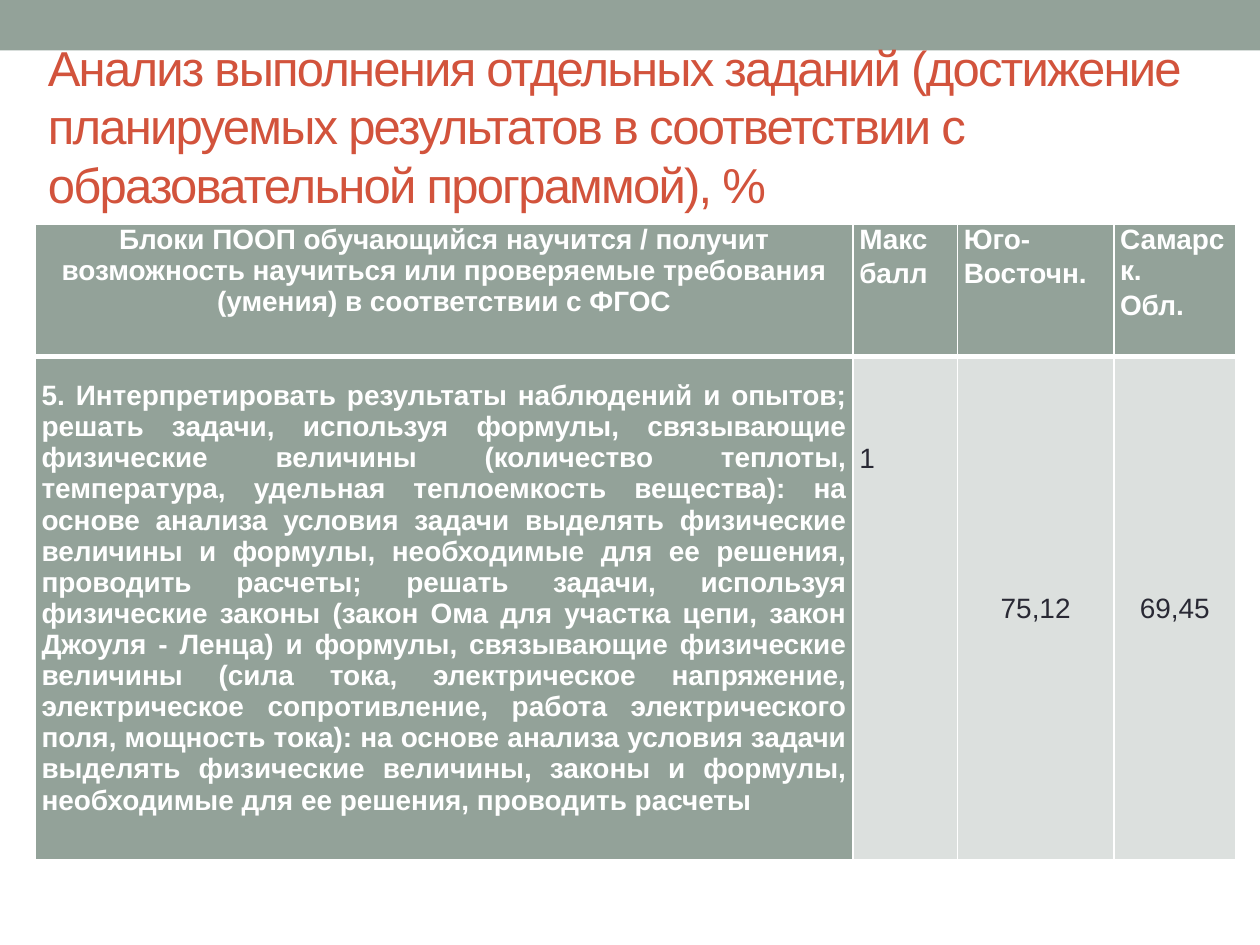
import pptx
import pptx.util
import pptx.dml.color
import pptx.enum.shapes
import pptx.enum.text
import lxml.etree
from pptx.oxml.ns import qn

Inches, Pt = pptx.util.Inches, pptx.util.Pt
ALIGN = pptx.enum.text.PP_ALIGN
ANCHOR = pptx.enum.text.MSO_ANCHOR
SAGE, PALE, WHITE, RED, INK = "93A299", "DCE0DE", "FFFFFF", "D2533C", "292934"


def paint(color_format, color):
    """Give a fill or font colour a hex value."""
    color_format.rgb = pptx.dml.color.RGBColor.from_string(color)


def add_border(cell, side, points):
    """Draw a white line on one side of a cell: L, R, T or B."""
    properties = cell._tc.get_or_add_tcPr()
    line = lxml.etree.Element(qn(f"a:ln{side}"), w=str(Pt(points)))
    solid = lxml.etree.SubElement(line, qn("a:solidFill"))
    lxml.etree.SubElement(solid, qn("a:srgbClr"), val=WHITE)
    properties.insert("LRTB".index(side), line)


deck = pptx.Presentation()
deck.slide_width, deck.slide_height = Inches(10), Inches(7.5)
slide = deck.slides.add_slide(deck.slide_layouts[5])
left, width = Inches(0.28), Inches(9.53)

# Title over the top band
title = slide.shapes.title
title.left, title.top, title.width, title.height = left, Inches(0.68), width, Inches(1.08)
heading = title.text_frame
heading.text = ("Анализ выполнения отдельных заданий (достижение планируемых результатов "
                "в соответствии с образовательной программой), %")
heading.word_wrap = True
heading.auto_size = pptx.enum.text.MSO_AUTO_SIZE.NONE
heading.vertical_anchor = ANCHOR.MIDDLE
heading.margin_bottom = Inches(0.5)
heading_line = heading.paragraphs[0]
heading_line.alignment = ALIGN.LEFT
heading_line.font.size, heading_line.font.name = Pt(28), "Arial"
paint(heading_line.font.color, RED)
heading_line.runs[0].font._element.set("spc", "-100")

band = slide.shapes.add_shape(pptx.enum.shapes.MSO_SHAPE.RECTANGLE,
                              0, 0, deck.slide_width, Inches(0.4))
band.shadow.inherit = False
band.fill.solid()
paint(band.fill.fore_color, SAGE)
band.line.fill.background()
title.element.addprevious(band.element)

# Results table
requirement = (
    "5. Интерпретировать результаты наблюдений и опытов; решать задачи, используя формулы, "
    "связывающие физические величины (количество теплоты, температура, удельная теплоемкость "
    "вещества): на основе анализа условия задачи выделять физические величины и формулы, "
    "необходимые для ее решения, проводить расчеты; решать задачи, используя физические законы "
    "(закон Ома для участка цепи, закон Джоуля - Ленца) и формулы, связывающие физические "
    "величины (сила тока, электрическое напряжение, электрическое сопротивление, работа "
    "электрического поля, мощность тока): на основе анализа условия задачи выделять физические "
    "величины, законы и формулы, необходимые для ее решения, проводить расчеты")
# Each cell: text, alignment, anchor, top margin in inches, line spacing
results = [
    [("Блоки ПООП обучающийся научится / получит возможность научиться или проверяемые "
      "требования (умения) в соответствии с ФГОС", ALIGN.CENTER, ANCHOR.TOP, 0, None),
     ("Макс\nбалл", ALIGN.LEFT, ANCHOR.TOP, 0, None),
     ("Юго-\nВосточн.", ALIGN.LEFT, ANCHOR.TOP, 0, None),
     ("Самарск.\nОбл.", ALIGN.LEFT, ANCHOR.TOP, 0, None)],
    [(requirement, ALIGN.JUSTIFY, ANCHOR.TOP, 0.19, None),
     ("1", ALIGN.LEFT, ANCHOR.TOP, 0.77, Pt(12)),
     ("75,12", ALIGN.CENTER, ANCHOR.MIDDLE, 0, 1.05),
     ("69,45", ALIGN.CENTER, ANCHOR.MIDDLE, 0, 1.05)],
]
column_widths, row_heights = [6.49, 0.83, 1.24, 0.97], [1.05, 3.99]
table = slide.shapes.add_table(len(row_heights), len(column_widths), left, Inches(1.78),
                               width, Inches(sum(row_heights))).table
for column, inches in zip(table.columns, column_widths):
    column.width = Inches(inches)
for row, inches in zip(table.rows, row_heights):
    row.height = Inches(inches)

for r, row in enumerate(results):
    for c, (text, alignment, anchor, top_margin, spacing) in enumerate(row):
        cell = table.cell(r, c)
        is_label = r == 0 or c == 0
        cell.text = text
        cell.vertical_anchor = anchor
        cell.margin_left = cell.margin_right = Inches(0.05)
        cell.margin_top, cell.margin_bottom = Inches(top_margin), 0
        cell.fill.solid()
        paint(cell.fill.fore_color, SAGE if is_label else PALE)
        for side in "LRTB":
            divides_header = (r, side) in [(0, "B"), (1, "T")]
            add_border(cell, side, 3 if divides_header else 1)
        for paragraph in cell.text_frame.paragraphs:
            paragraph.alignment = alignment
            paragraph.line_spacing = spacing
            paragraph.space_after = Pt(0 if anchor == ANCHOR.MIDDLE else 1.9)
            paragraph.font.size, paragraph.font.name = Pt(16), "Arial"
            paragraph.font.bold = is_label
            paint(paragraph.font.color, WHITE if is_label else INK)

deck.save("out.pptx")
